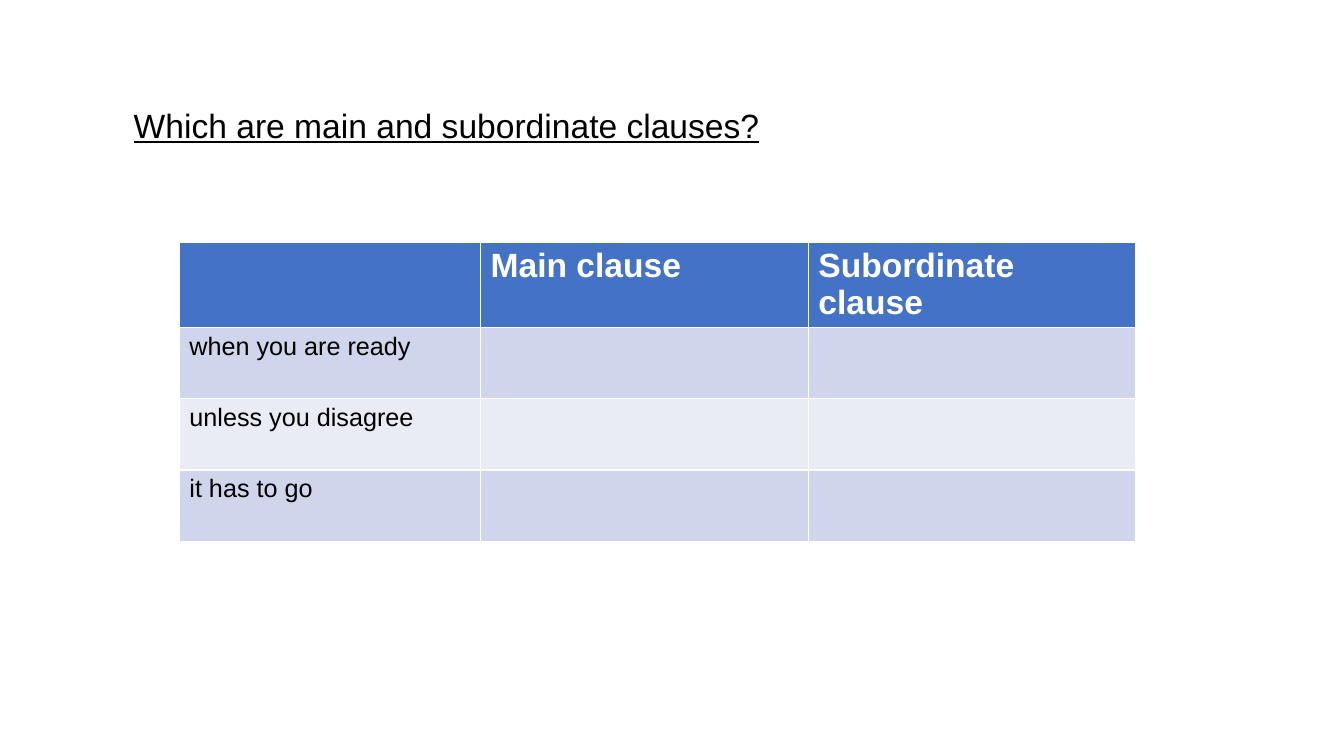
"""Build a slide with a table for sorting main and subordinate clauses."""
from pptx import Presentation
from pptx.dml.color import RGBColor
from pptx.util import Cm, Pt

TITLE = "Which are main and subordinate clauses?"
ROWS = [
    ("", "Main clause", "Subordinate clause"),
    ("when you are ready", "", ""),
    ("unless you disagree", "", ""),
    ("it has to go", "", ""),
]
COLUMN_WIDTHS = (7.59, 8.26, 8.26)
ROW_HEIGHT = 1.8
FONT = "Arial"
COLOURS = {
    "header": "4472C4",
    "odd": "CFD5EA",
    "even": "E9EBF5",
    "light": "FFFFFF",
    "dark": "000000",
}


def format_text(text_frame, size, colour, bold=False, underline=False):
    for paragraph in text_frame.paragraphs:
        for run in paragraph.runs:
            run.font.name = FONT
            run.font.size = Pt(size)
            run.font.bold = bold
            run.font.underline = underline
            run.font.color.rgb = RGBColor.from_string(COLOURS[colour])


def add_title(slide):
    title = slide.shapes.add_textbox(Cm(3.12), Cm(2.51), Cm(24.08), Cm(1.28))
    title.text_frame.word_wrap = True
    title.text_frame.text = TITLE
    format_text(title.text_frame, 24, "dark", underline=True)


def add_clause_table(slide):
    table = slide.shapes.add_table(
        len(ROWS), len(COLUMN_WIDTHS), Cm(4.52), Cm(6.1),
        Cm(sum(COLUMN_WIDTHS)), Cm(ROW_HEIGHT * len(ROWS)),
    ).table
    for column, width in zip(table.columns, COLUMN_WIDTHS):
        column.width = Cm(width)
    for row_index, texts in enumerate(ROWS):
        is_header = row_index == 0
        band = "header" if is_header else "odd" if row_index % 2 else "even"
        table.rows[row_index].height = Cm(ROW_HEIGHT)
        for cell, text in zip(table.rows[row_index].cells, texts):
            cell.fill.solid()
            cell.fill.fore_color.rgb = RGBColor.from_string(COLOURS[band])
            cell.text_frame.text = text
            if is_header:
                format_text(cell.text_frame, 24, "light", bold=True)
            else:
                format_text(cell.text_frame, 18, "dark")


def main():
    presentation = Presentation()
    presentation.slide_width = Cm(33.87)
    presentation.slide_height = Cm(19.05)
    slide = presentation.slides.add_slide(presentation.slide_layouts[6])
    add_clause_table(slide)
    add_title(slide)
    presentation.save("out.pptx")


if __name__ == "__main__":
    main()
